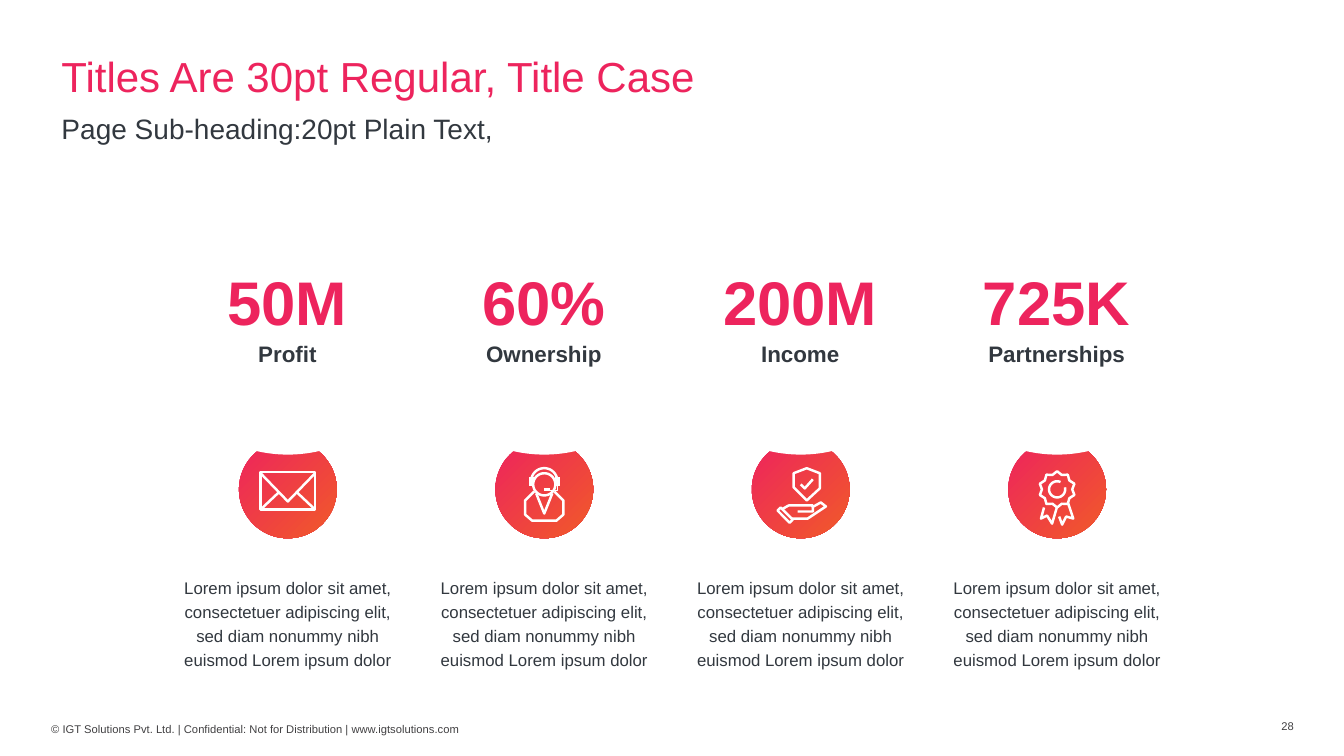
import math

from lxml import etree
from pptx import Presentation
from pptx import util as u
from pptx.dml import color
from pptx.enum import shapes, text
from pptx.oxml import ns

PINK, ORANGE, DARK, GREY, WHITE = "ED245D", "F15A29", "32383F", "414042", "FFFFFF"
LOREM = ("Lorem ipsum dolor sit amet, consectetuer adipiscing elit, "
         "sed diam nonummy nibh euismod Lorem ipsum dolor")
FIRST_CENTRE, PITCH = 2.855, 7.63 / 3
BADGE_Y, BADGE_SIZE, DISC_SIZE = 4.855, 0.97, 2.77
THIN = 1.75


def rgb(value):
    return color.RGBColor.from_string(value)


def arc(cx, cy, radius, start, end, steps=36):
    """Points along an arc, in degrees clockwise from the right."""
    angles = [math.radians(start + (end - start) * i / steps) for i in range(steps + 1)]
    return [(cx + radius * math.cos(a), cy + radius * math.sin(a)) for a in angles]


def rosette(tips, outer, inner):
    """Corners of a star whose first tip points up."""
    corners = []
    for i in range(2 * tips):
        radius, angle = (inner if i % 2 else outer), math.pi * i / tips
        corners.append((radius * math.sin(angle), -radius * math.cos(angle)))
    return corners


# Each icon lists strokes as (points from the badge centre, closed, width in points).
ENVELOPE = [
    ([(-0.27, -0.17), (0.27, -0.17), (0.27, 0.2), (-0.27, 0.2)], True, THIN),
    ([(-0.27, -0.16), (0, 0.12), (0.27, -0.16)], False, THIN),
    ([(-0.09, 0.03), (-0.27, 0.2)], False, THIN),
    ([(0.09, 0.03), (0.27, 0.2)], False, THIN),
]
AGENT = [
    (arc(0, -0.08, 0.13, 180, 360), False, THIN),
    (arc(0, -0.05, 0.11, 0, 360)[:-1], True, THIN),
    ([(-0.1, 0.02), (-0.19, 0.11), (-0.19, 0.25), (-0.12, 0.31), (0.12, 0.31),
      (0.19, 0.25), (0.19, 0.11), (0.1, 0.02)], False, THIN),
    ([(-0.08, 0.04), (0, 0.24), (0.08, 0.04)], False, THIN),
    ([(-0.13, -0.12), (-0.13, -0.03)], False, 3.6),
    ([(0.13, -0.12), (0.13, -0.03)], False, 3.6),
    ([(0.13, -0.07), (0.13, 0.01), (0.03, 0.01)], False, 1),
    ([(0, 0), (0.06, 0)], False, 2.5),
]
SHIELD_IN_HAND = [
    ([(0.06, -0.21), (0.19, -0.16), (0.19, -0.01), (0.06, 0.11),
      (-0.07, -0.02), (-0.07, -0.16)], True, THIN),
    ([(0, -0.05), (0.04, -0.01), (0.12, -0.1)], False, THIN),
    ([(-0.23, 0.21), (-0.2, 0.18), (-0.08, 0.3), (-0.11, 0.33)], True, THIN),
    ([(-0.19, 0.2), (-0.12, 0.16), (0.12, 0.16), (0.12, 0.22), (-0.03, 0.22)], False, THIN),
    ([(-0.09, 0.29), (0.07, 0.29), (0.25, 0.17), (0.2, 0.13), (0.11, 0.18)], False, THIN),
]
AWARD = [
    (rosette(10, 0.18, 0.15), True, THIN),
    (arc(0, 0, 0.08, -14, 295), False, THIN),
    ([(-0.13, 0.18), (-0.16, 0.29), (-0.1, 0.26), (-0.05, 0.34), (0, 0.17)], False, THIN),
    ([(0.11, 0.14), (0.16, 0.29), (0.09, 0.27), (0.05, 0.35), (0.02, 0.27)], False, THIN),
]
FIGURES = [
    ("50M", "Profit", ENVELOPE),
    ("60%", "Ownership", AGENT),
    ("200M", "Income", SHIELD_IN_HAND),
    ("725K", "Partnerships", AWARD),
]


def write(frame, words, size, colour=DARK, bold=False, align=None, spacing=1.0):
    frame.word_wrap = True
    frame.auto_size = text.MSO_AUTO_SIZE.NONE
    frame.vertical_anchor = text.MSO_ANCHOR.TOP
    para = frame.paragraphs[0]
    para.alignment = align or text.PP_ALIGN.LEFT
    para.line_spacing = spacing
    para.space_before = u.Pt(0)
    run = para.add_run()
    run.text = words
    run.font.name, run.font.size, run.font.bold = "Arial", u.Pt(size), bold
    run.font.color.rgb = rgb(colour)


def place(placeholder, left, top, width, height):
    placeholder.left, placeholder.top = u.Inches(left), u.Inches(top)
    placeholder.width, placeholder.height = u.Inches(width), u.Inches(height)


def add_label(slide, box, words, size, **style):
    label = slide.shapes.add_textbox(*map(u.Inches, box))
    write(label.text_frame, words, size, **style)


def add_circle(slide, cx, cy, size):
    circle = slide.shapes.add_shape(
        shapes.MSO_SHAPE.OVAL, u.Inches(cx - size / 2), u.Inches(cy - size / 2),
        u.Inches(size), u.Inches(size))
    circle.shadow.inherit = False
    circle.line.fill.background()
    return circle


def add_stroke(slide, points, closed, width):
    dots = [(u.Inches(x), u.Inches(y)) for x, y in points]
    if len(dots) == 2:
        stroke = slide.shapes.add_connector(shapes.MSO_CONNECTOR.STRAIGHT, *dots[0], *dots[1])
        etree.SubElement(stroke.line._get_or_add_ln().getparent(), ns.qn("a:effectLst"))
    else:
        builder = slide.shapes.build_freeform(*dots[0])
        builder.add_line_segments(dots[1:], close=closed)
        stroke = builder.convert_to_shape()
        stroke.shadow.inherit = False
        stroke.fill.background()
    stroke.line.color.rgb = rgb(WHITE)
    stroke.line.width = u.Pt(width)


def add_icon(slide, cx, cy, strokes):
    for points, closed, width in strokes:
        add_stroke(slide, [(cx + x, cy + y) for x, y in points], closed, width)


def add_figure(slide, cx, value, caption, icon):
    """One column: badge tucked under a white disc, number, caption and text."""
    badge = add_circle(slide, cx, BADGE_Y, BADGE_SIZE)
    badge.fill.gradient()
    badge.fill.gradient_angle = 315
    for stop, colour in zip(badge.fill.gradient_stops, (PINK, ORANGE)):
        stop.color.rgb = rgb(colour)
    disc = add_circle(slide, cx, 1.74 + DISC_SIZE / 2, DISC_SIZE)
    disc.fill.solid()
    disc.fill.fore_color.rgb = rgb(WHITE)

    centre = text.PP_ALIGN.CENTER
    add_label(slide, (cx - 0.98, 3.33, 1.95, 0.37), caption, 16, bold=True, align=centre)
    add_label(slide, (cx - 0.98, 2.65, 1.95, 0.77), value, 44,
              colour=PINK, bold=True, align=centre, spacing=0.9)
    add_label(slide, (cx - 1.2, 5.64, 2.4, 1.05), LOREM, 12, align=centre, spacing=1.2)
    add_icon(slide, cx, BADGE_Y, icon)


def add_heading(slide):
    title, subheading = slide.shapes.title, slide.placeholders[1]
    place(title, 0.51, 0.51, 12.32, 0.76)
    write(title.text_frame, "Titles Are 30pt Regular, Title Case", 30,
          colour=PINK, spacing=0.9)
    place(subheading, 0.51, 1.09, 11.04, 0.39)
    props = subheading.text_frame.paragraphs[0]._p.get_or_add_pPr()
    props.set("marL", "0")
    props.set("indent", "0")
    etree.SubElement(props, ns.qn("a:buNone"))
    write(subheading.text_frame, "Page Sub-heading:20pt Plain Text,", 20, spacing=0.9)


def add_footer(slide):
    add_label(slide, (0.41, 7.12, 10.64, 0.4),
              "© IGT Solutions Pvt. Ltd. | Confidential: Not for Distribution | "
              "www.igtsolutions.com", 8, colour=GREY)
    add_label(slide, (12.61, 7.09, 0.44, 0.4), "28", 8, colour=GREY)


def main():
    deck = Presentation()
    deck.slide_width, deck.slide_height = u.Inches(13.33), u.Inches(7.5)
    slide = deck.slides.add_slide(deck.slide_layouts[1])
    add_heading(slide)
    for i, figure in enumerate(FIGURES):
        add_figure(slide, FIRST_CENTRE + i * PITCH, *figure)
    add_footer(slide)
    deck.save("out.pptx")


if __name__ == "__main__":
    main()
